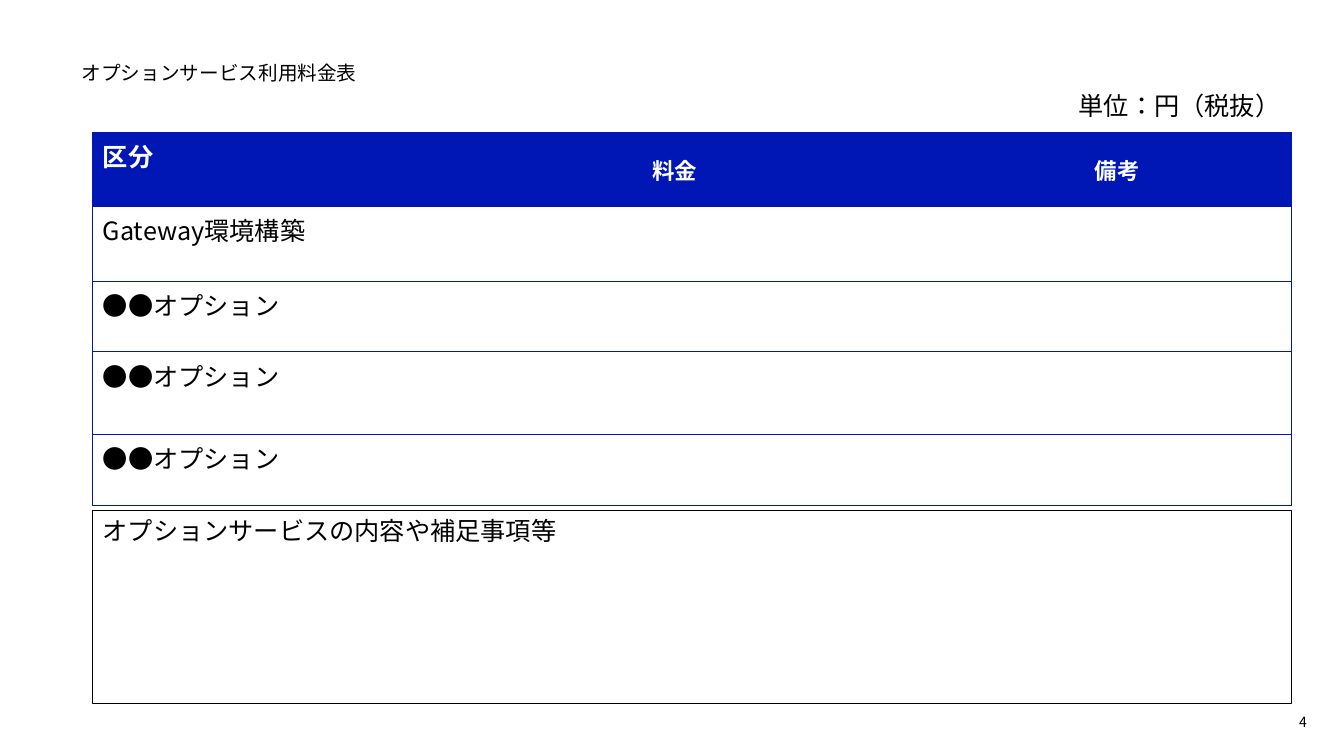
from dataclasses import dataclass
from lxml.etree import SubElement as Sub
from pptx import Presentation
from pptx.dml.color import RGBColor as Rgb
from pptx.enum.lang import MSO_LANGUAGE_ID as Lang
from pptx.enum.shapes import MSO_SHAPE as Shape
from pptx.enum.text import MSO_ANCHOR as Anchor, PP_ALIGN as Align
from pptx.oxml.ns import qn
from pptx.util import Inches, Pt


@dataclass(frozen=True)
class Theme:
    """Hold the colours, type sizes and line widths."""
    font: str = "Noto Sans CJK JP"
    ink: str = "000000"
    blue: str = "0017B6"
    white: str = "FFFFFF"
    body: int = 18
    head: int = 16
    title: int = 14
    page: int = 10
    rule: float = 0.5
    frame: float = 0.75


LOOK = Theme()
WIDE, HIGH = Inches(13.33), Inches(7.5)
COLS = [3.12, 5.31, 3.46]
ROWS = [0.74, 0.74, 0.7, 0.82, 0.7]
HEADS = ["区分", "料金", "備考"]
ITEMS = ["Gateway環境構築"] + ["●●オプション"] * 3


def area(left, top, width, height):
    """Turn percentages of the slide into a box."""
    return [int(WIDE * left / 100), int(HIGH * top / 100),
            int(WIDE * width / 100), int(HIGH * height / 100)]


def write(frame, text, size=LOOK.body, color=LOOK.ink, bold=False, align=Align.LEFT):
    """Write one formatted line into a text frame."""
    line = frame.paragraphs[0]
    line.alignment = align
    run = line.add_run()
    run.text = text
    font = run.font
    font.name, font.size, font.bold = LOOK.font, Pt(size), bold
    font.color.rgb = Rgb.from_string(color)
    font.language_id = Lang.JAPANESE
    Sub(font._element, qn("a:ea"), typeface=LOOK.font)


def label(slide, box, text, pads=(0.1, 0.05, 0.1, 0.05), anchor=Anchor.TOP, **form):
    """Add a text box with the given insets."""
    frame = slide.shapes.add_textbox(*box).text_frame
    frame.word_wrap = True
    frame.vertical_anchor = anchor
    (frame.margin_left, frame.margin_top,
     frame.margin_right, frame.margin_bottom) = map(Inches, pads)
    write(frame, text, **form)


def edge(cell, sides):
    """Rule the named sides of a cell and clear the rest."""
    props = cell._tc.get_or_add_tcPr()
    for spot, side in enumerate("LRTB"):
        line = props.makeelement(qn(f"a:ln{side}"), w=str(Pt(LOOK.rule)))
        if side in sides:
            Sub(Sub(line, qn("a:solidFill")), qn("a:srgbClr"), val=LOOK.blue)
        else:
            Sub(line, qn("a:noFill"))
        props.insert(spot, line)


def prices(slide, box):
    """Add the price table, its tracks shared out over the box."""
    grid = slide.shapes.add_table(len(ROWS), len(COLS), *box).table
    for col, part in zip(grid.columns, COLS):
        col.width = int(box[2] * part / sum(COLS))
    for row, part in zip(grid.rows, ROWS):
        row.height = int(box[3] * part / sum(ROWS))
    texts = [HEADS] + [[item, "", ""] for item in ITEMS]
    last = len(COLS) - 1
    for r, row in enumerate(texts):
        for c, text in enumerate(row):
            cell = grid.cell(r, c)
            cell.fill.solid()
            cell.fill.fore_color.rgb = Rgb.from_string(LOOK.white if r else LOOK.blue)
            edge(cell, "TB" + "L" * (c == 0) + "R" * (c == last))
            form = {}
            if r == 0:
                form = dict(color=LOOK.white, bold=True)
                if c:
                    cell.vertical_anchor = Anchor.MIDDLE
                    form.update(size=LOOK.head, align=Align.CENTER)
            if text:
                write(cell.text_frame, text, **form)


def notes(slide, box):
    """Add the framed box for remarks."""
    rect = slide.shapes.add_shape(Shape.RECTANGLE, *box)
    rect.shadow.inherit = False
    rect.fill.background()
    rect.line.color.rgb = Rgb.from_string(LOOK.ink)
    rect.line.width = Pt(LOOK.frame)
    rect.text_frame.word_wrap = True
    rect.text_frame.vertical_anchor = Anchor.TOP
    write(rect.text_frame, "オプションサービスの内容や補足事項等")


def main():
    """Build and save the slide."""
    deck = Presentation()
    deck.slide_width, deck.slide_height = WIDE, HIGH
    slide = deck.slides.add_slide(deck.slide_layouts[6])
    label(slide, area(6.08, 8, 87.92, 4.53), "オプションサービス利用料金表",
          pads=(0, 0, 0, 0), size=LOOK.title)
    label(slide, area(93.55, 92.8, 3.68, 5.33), "4", pads=(0.1, 0.05, 0, 0.05),
          anchor=Anchor.MIDDLE, size=LOOK.page, align=Align.RIGHT)
    prices(slide, area(6.9, 17.47, 89.2, 49.33))
    notes(slide, area(6.9, 67.47, 89.2, 25.6))
    label(slide, area(79.52, 11.33, 16.5, 5.33), "単位：円（税抜）")
    deck.save("out.pptx")


if __name__ == "__main__":
    main()
